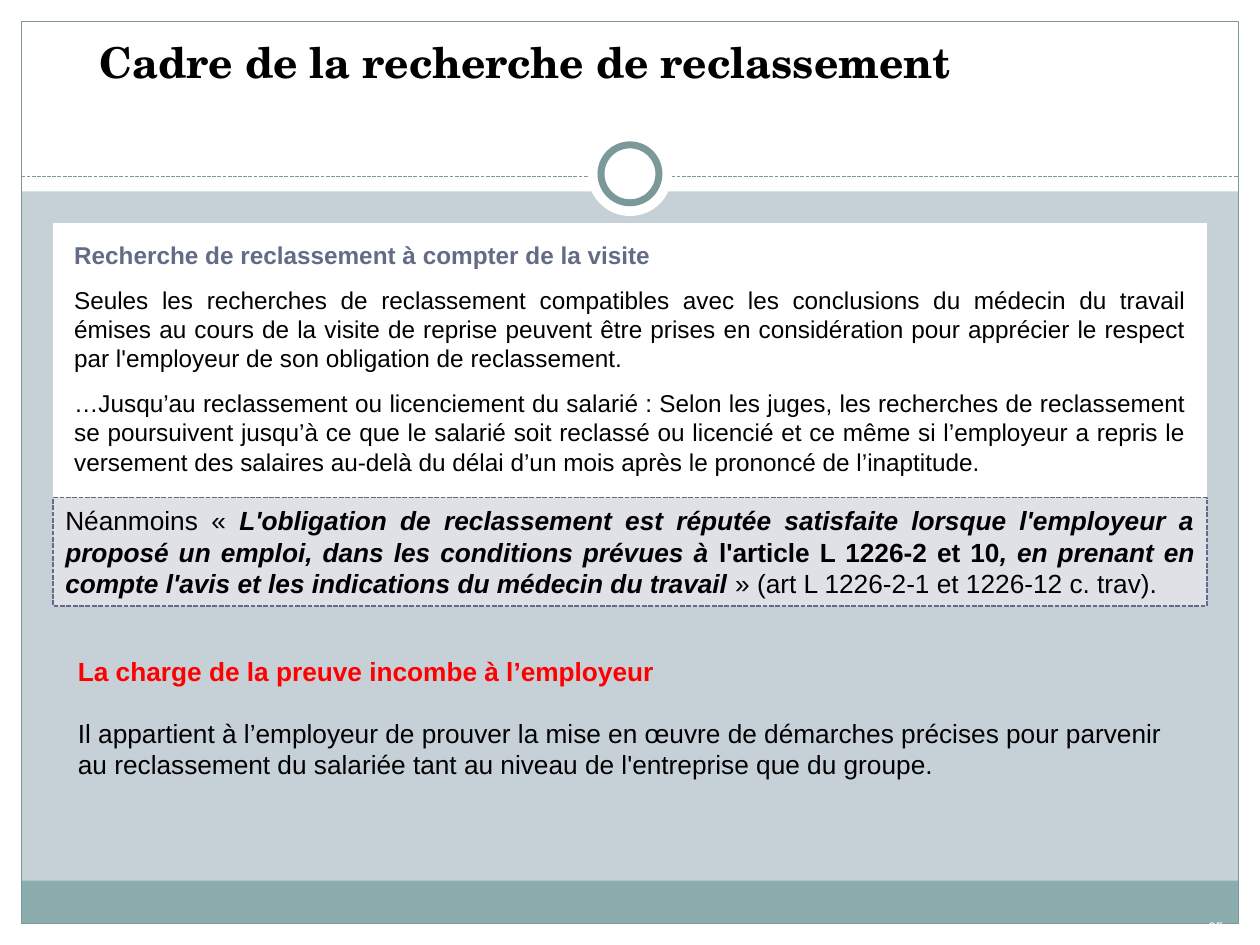
from lxml import etree
from pptx import Presentation
from pptx.dml.color import RGBColor as RGB
from pptx.enum.dml import MSO_LINE as Dash
from pptx.enum.shapes import MSO_CONNECTOR as Conn, MSO_SHAPE as Shape
from pptx.enum.text import MSO_ANCHOR as Anchor, PP_ALIGN as Align
from pptx.oxml.ns import qn
from pptx.util import Inches, Pt

HUES = {
    "back": "C5D1D7", "white": "FFFFFF", "black": "000000", "red": "FF0000",
    "band": "8CADAE", "edge": "7C999A", "slate": "646B86", "pale": "DFE1E7",
}


def hue(name):
    return RGB.from_string(HUES[name])


def stroke(line, color, width, dash=None):
    line.color.rgb = hue(color)
    line.width = Pt(width)
    if dash:
        line.dash_style = dash


def block(slide, box, fill=None, line=None, width=0.75, dash=None, kind=Shape.RECTANGLE):
    shape = slide.shapes.add_shape(kind, *map(Inches, box))
    shape.shadow.inherit = False
    if fill:
        shape.fill.solid()
        shape.fill.fore_color.rgb = hue(fill)
    else:
        shape.fill.background()
    if line:
        stroke(shape.line, line, width, dash)
    else:
        shape.line.fill.background()
    return shape


def label(slide, box):
    return slide.shapes.add_textbox(*map(Inches, box))


def setup(shape, pads=(0.1, 0.05, 0.1, 0.05), anchor=Anchor.TOP):
    """Set wrapping, insets (left, top, right, bottom) and anchor."""
    frame = shape.text_frame
    frame.word_wrap = True
    frame.vertical_anchor = anchor
    (frame.margin_left, frame.margin_top,
     frame.margin_right, frame.margin_bottom) = map(Inches, pads)
    return frame


def write(frame, text, size=15, font="Arial", color="black", bold=False,
          align=Align.LEFT, before=0, lines=1, indent=0):
    """Add a paragraph; text is a string or a list of (text, bold, italic)."""
    para = frame.paragraphs[0]
    if para.runs:
        para = frame.add_paragraph()
    para.alignment = align
    para.space_before = Pt(before)
    para.line_spacing = lines
    if indent:
        props = para._p.get_or_add_pPr()
        props.set("marL", str(Inches(indent)))
        props.set("indent", "0")
    parts = [(text, bold, False)] if isinstance(text, str) else text
    for words, heavy, slant in parts:
        run = para.add_run()
        run.text = words
        run.font.size = Pt(size)
        run.font.name = font
        run.font.bold = heavy
        run.font.italic = slant
        run.font.color.rgb = hue(color)


def ring(slide, x, y):
    """White disc with a smaller outlined circle, both centred on x, y."""
    for size, line in ((0.67, None), (0.46, "edge")):
        box = (x - size / 2, y - size / 2, size, size)
        block(slide, box, "white", line, 4, kind=Shape.OVAL)


def backdrop(slide, wide, high):
    slide.background.fill.solid()
    slide.background.fill.fore_color.rgb = hue("back")
    rim, head, foot = 0.17, 1.52, 0.34
    inner = wide - 2 * rim
    for box in ((0, high - rim, wide, rim), (0, 0, wide, head),
                (0, 0, rim, high), (wide - rim, 0, rim, high)):
        block(slide, box, "white")
    block(slide, (rim, high - rim - foot, inner, foot), "band")
    block(slide, (rim, rim, inner, high - 2 * rim), line="edge")
    ends = map(Inches, (rim, 1.4, wide - rim, 1.4))
    rule = slide.shapes.add_connector(Conn.STRAIGHT, *ends)
    stroke(rule.line, "edge", 0.75, Dash.SQUARE_DOT)
    etree.SubElement(rule._element.spPr, qn("a:effectLst"))
    ring(slide, wide / 2, 1.38)


def title(slide, box):
    frame = setup(label(slide, box), (0.1, 0.01, 0.1, 0.05))
    write(frame, "Cadre de la recherche de reclassement", size=24.3,
          font="TeX Gyre Schola", bold=True, lines=0.9)


def search(slide, box):
    frame = setup(block(slide, box, "white"), (0.1, 0.16, 0.16, 0.16))
    write(frame, "Recherche de reclassement à compter de la visite", size=13.9,
          color="slate", bold=True, lines=0.9, indent=0.07)
    for text in (
        "Seules les recherches de reclassement compatibles avec les conclusions "
        "du médecin du travail émises au cours de la visite de reprise peuvent "
        "être prises en considération pour apprécier le respect par l'employeur "
        "de son obligation de reclassement. ",
        "…Jusqu’au reclassement ou licenciement du salarié : Selon les juges, les "
        "recherches de reclassement se poursuivent jusqu’à ce que le salarié soit "
        "reclassé ou licencié et ce même si l’employeur a repris le versement des "
        "salaires au-delà du délai d’un mois après le prononcé de l’inaptitude.",
    ):
        write(frame, text, size=13.9, align=Align.JUSTIFY, before=9, indent=0.07)


def quote(slide, box):
    shape = block(slide, box, "pale", "slate", 0.9, Dash.SQUARE_DOT)
    write(setup(shape, anchor=Anchor.MIDDLE), [
        ("Néanmoins « ", False, False),
        ("L'obligation de reclassement est réputée satisfaite lorsque l'employeur "
         "a proposé un emploi, dans les conditions prévues à ", True, True),
        ("l'article L 1226-2 et 10", True, False),
        (", en prenant en compte l'avis et les indications du médecin du travail",
         True, True),
        (" » (art L 1226-2-1 et 1226-12 c. trav).", False, False),
    ], align=Align.JUSTIFY)


def proof(slide, box):
    frame = setup(label(slide, box))
    write(frame, "La charge de la preuve incombe à l’employeur", color="red", bold=True)
    write(frame, "Il appartient à l’employeur de prouver la mise en œuvre de démarches "
          "précises pour parvenir au reclassement du salariée tant au niveau de "
          "l'entreprise que du groupe.", before=17.25)


def number(slide, box):
    frame = setup(label(slide, box), (0.05,) * 4, Anchor.MIDDLE)
    write(frame, "65", size=7.9, color="white", align=Align.CENTER)


def main():
    deck = Presentation()
    wide, high = 10, 7.5
    deck.slide_width, deck.slide_height = Inches(wide), Inches(high)
    slide = deck.slides.add_slide(deck.slide_layouts[6])
    backdrop(slide, wide, high)
    title(slide, (0.69, 0.32, 8.62, 0.79))
    left, span = 0.42, 9.16
    search(slide, (left, 1.77, span, 2.18))
    number(slide, (9.39, 7.21, 0.52, 0.29))
    quote(slide, (left, 3.95, span, 0.86))
    proof(slide, (0.52, 5.15, 9.07, 1.34))
    deck.save("out.pptx")


if __name__ == "__main__":
    main()
